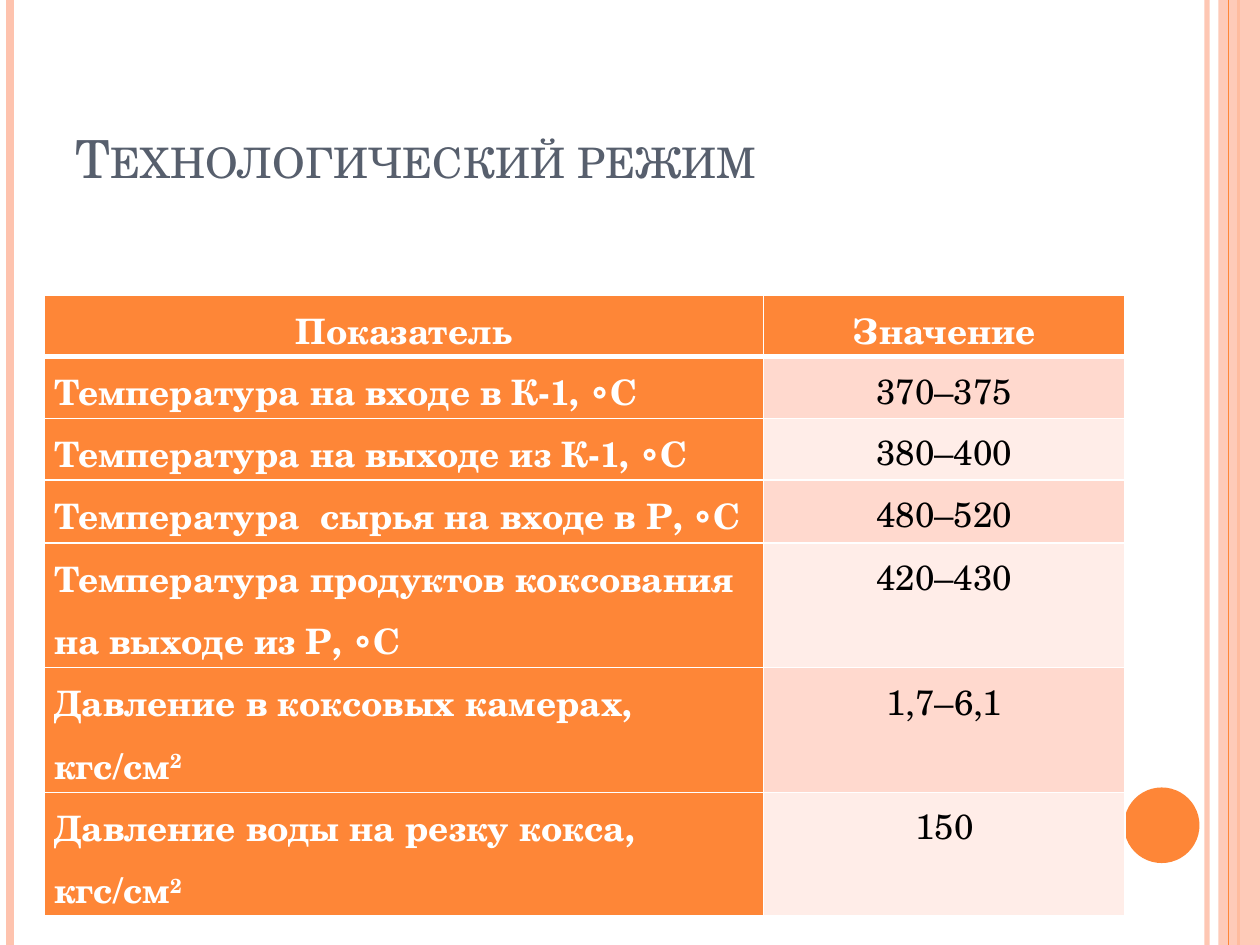
from lxml.etree import SubElement
from pptx import Presentation
from pptx.dml.color import RGBColor
from pptx.enum.shapes import MSO_CONNECTOR, MSO_SHAPE
from pptx.enum.text import MSO_ANCHOR, PP_ALIGN
from pptx.oxml.ns import qn
from pptx.util import Inches, Pt

FONT = "TeX Gyre Schola"
ORANGE = RGBColor(0xFE, 0x86, 0x37)
PEACH = RGBColor(0xFE, 0xC3, 0xAE)
SLATE = RGBColor(0x57, 0x5F, 0x6D)
WHITE = RGBColor(0xFF, 0xFF, 0xFF)
BLACK = RGBColor(0, 0, 0)
BAND_DARK = RGBColor(0xFF, 0xD9, 0xCE)
BAND_LIGHT = RGBColor(0xFF, 0xED, 0xE8)

HEADINGS = ("Показатель", "Значение")
READINGS = [
    ("Температура на входе в К-1, ◦С", "", "370–375"),
    ("Температура на выходе из К-1, ◦С", "", "380–400"),
    ("Температура  сырья на входе в Р, ◦С", "", "480–520"),
    ("Температура продуктов коксования на выходе из Р, ◦С", "", "420–430"),
    ("Давление в коксовых камерах, кгс/см", "2", "1,7–6,1"),
    ("Давление воды на резку кокса, кгс/см", "2", "150"),
]
COLUMN_WIDTHS = (5.71, 2.87)
ROW_HEIGHTS = (0.49, 0.49, 0.49, 0.5, 0.99, 0.99, 0.98)


def set_opacity(element, percent):
    color = element.find(".//" + qn("a:srgbClr"))
    SubElement(color, qn("a:alpha"), val=str(percent * 1000))


def add_stripe(page, left, height, color, weight, opacity=100):
    stripe = page.shapes.add_connector(
        MSO_CONNECTOR.STRAIGHT, Inches(left), 0, Inches(left), height)
    stripe.line.color.rgb = color
    stripe.line.width = Pt(weight)
    properties = stripe.element.spPr
    if opacity < 100:
        set_opacity(properties, opacity)
    SubElement(properties, qn("a:effectLst"))


def add_solid(page, preset, color, left, top, width, height):
    shape = page.shapes.add_shape(
        preset, Inches(left), Inches(top), Inches(width), Inches(height))
    shape.shadow.inherit = False
    shape.fill.solid()
    shape.fill.fore_color.rgb = color
    shape.line.fill.background()
    return shape


def add_frame(page, height):
    add_stripe(page, 9.58, height, PEACH, 3, 93)
    add_stripe(page, 0.08, height, PEACH, 4.5)
    add_stripe(page, 9.83, height, ORANGE, 1.5)
    band = add_solid(page, MSO_SHAPE.RECTANGLE, PEACH, 9.67, 0, 0.33, 7.5)
    set_opacity(band.element.spPr, 87)
    add_stripe(page, 9.75, height, ORANGE, 0.75)
    add_solid(page, MSO_SHAPE.OVAL, ORANGE, 8.92, 6.25, 0.6, 0.6)


def add_span(para, text, size, color, bold=False):
    span = para.add_run()
    span.text = text
    span.font.name = FONT
    span.font.size = Pt(size)
    span.font.bold = bold
    span.font.color.rgb = color
    return span


def add_title(page, text, left, top, width, height):
    box = page.shapes.add_textbox(
        Inches(left), Inches(top), Inches(width), Inches(height))
    box.text_frame.word_wrap = True
    box.text_frame.vertical_anchor = MSO_ANCHOR.BOTTOM
    span = add_span(box.text_frame.paragraphs[0], text, 30, SLATE)
    span.font._element.set("cap", "small")


def add_borders(cell, top_weight, bottom_weight):
    properties = cell._tc.get_or_add_tcPr()
    weights = (("L", 1), ("R", 1), ("T", top_weight), ("B", bottom_weight))
    for side, weight in weights:
        line = SubElement(properties, qn("a:ln" + side), w=str(Pt(weight)))
        fill = SubElement(line, qn("a:solidFill"))
        SubElement(fill, qn("a:srgbClr"), val=str(WHITE))


def fill_cell(cell, text, color, fill, bold, centered, power="",
              top_weight=1, bottom_weight=1):
    cell.margin_left = cell.margin_right = Inches(0.08)
    cell.margin_top = cell.margin_bottom = 0
    add_borders(cell, top_weight, bottom_weight)
    cell.fill.solid()
    cell.fill.fore_color.rgb = fill
    para = cell.text_frame.paragraphs[0]
    para.alignment = PP_ALIGN.CENTER if centered else PP_ALIGN.LEFT
    para.line_spacing = 1.15
    add_span(para, text, 20, color, bold)
    if power:
        span = add_span(para, power, 20, color, bold)
        span.font._element.set("baseline", "30000")


def add_readings(page, left, top):
    table = page.shapes.add_table(
        len(ROW_HEIGHTS), len(COLUMN_WIDTHS), Inches(left), Inches(top),
        Inches(sum(COLUMN_WIDTHS)), Inches(sum(ROW_HEIGHTS))).table
    for column, width in zip(table.columns, COLUMN_WIDTHS):
        column.width = Inches(width)
    for row, height in zip(table.rows, ROW_HEIGHTS):
        row.height = Inches(height)
    for index, heading in enumerate(HEADINGS):
        fill_cell(table.cell(0, index), heading, WHITE, ORANGE, True, True,
                  bottom_weight=3)
    for index, (name, power, value) in enumerate(READINGS, 1):
        band = BAND_DARK if index % 2 else BAND_LIGHT
        top_weight = 3 if index == 1 else 1
        fill_cell(table.cell(index, 0), name, WHITE, ORANGE, True, False,
                  power, top_weight)
        fill_cell(table.cell(index, 1), value, BLACK, band, False, True,
                  top_weight=top_weight)


def main():
    deck = Presentation()
    deck.slide_width = Inches(10)
    deck.slide_height = Inches(7.5)
    page = deck.slides.add_slide(deck.slide_layouts[6])
    add_frame(page, deck.slide_height)
    add_title(page, "Технологический режим", 0.5, 0.3, 8.17, 1.25)
    add_readings(page, 0.35, 2.34)
    deck.save("out.pptx")


if __name__ == "__main__":
    main()
